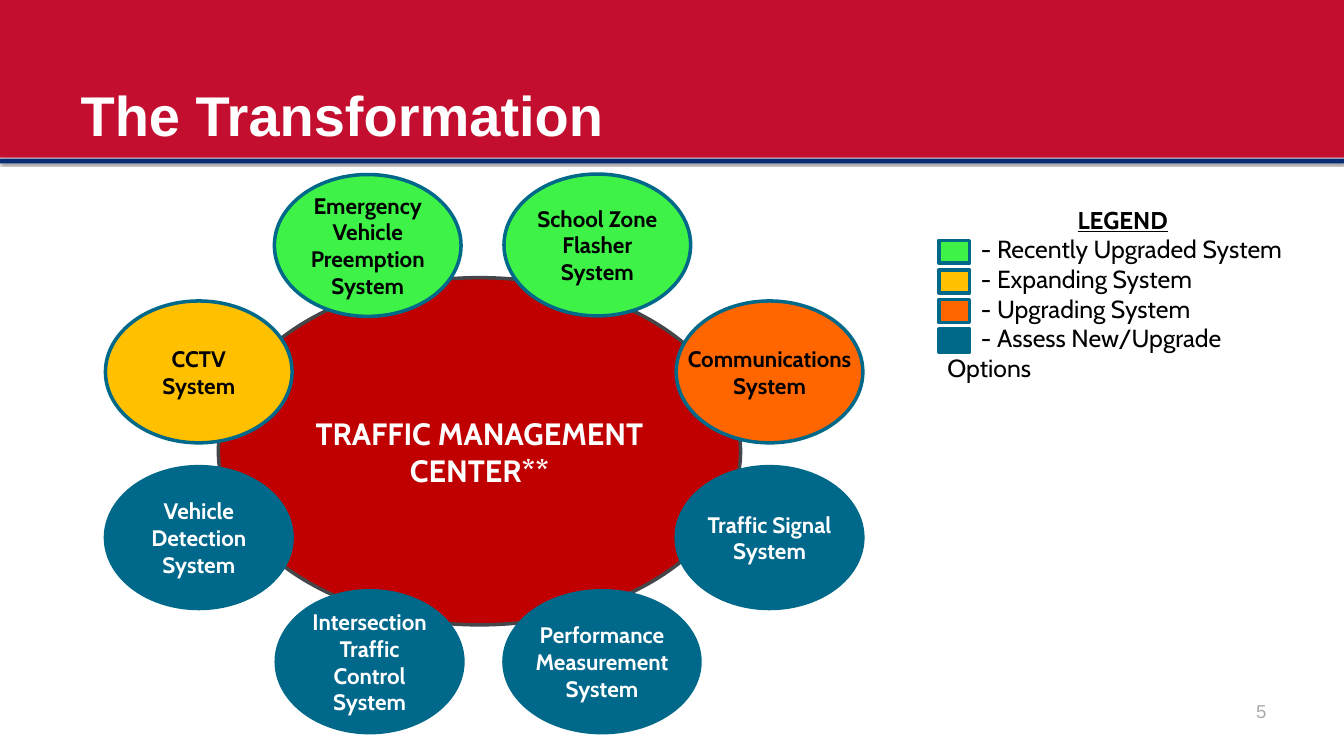
import pptx
import pptx.util
import pptx.dml.color
import pptx.enum.shapes
import pptx.enum.text
import lxml.etree

Pt = pptx.util.Pt
SHAPE = pptx.enum.shapes.MSO_SHAPE
ALIGN = pptx.enum.text.PP_ALIGN
ANCHOR = pptx.enum.text.MSO_ANCHOR

COLORS = {
    "banner": "C30E2F", "rule": "0A2C74", "center": "C00000", "center_line": "44464A",
    "outline": "006889", "upgraded": "3EF247", "expanding": "FFC000",
    "upgrading": "FF6600", "assess": "00698B", "white": "FFFFFF", "black": "000000",
    "number": "AAAAAA",
}
TITLE = "The Transformation"
CENTER = ["TRAFFIC MANAGEMENT", "CENTER**"]
PAGE_NUMBER = "5"
SYSTEMS = [
    (["Vehicle Detection System"], "assess", 113, 500, 200),
    (["CCTV System"], "expanding", 113, 322.5, 200),
    (["Emergency Vehicle Preemption System"], "upgraded", 294, 187, 200),
    (["Communications", "System"], "upgrading", 724.5, 322.5, 200),
    (["Intersection Traffic Control System"], "assess", 296, 633, 200),
    (["Performance Measurement System"], "assess", 540, 633, 210),
    (["Traffic Signal System"], "assess", 724.5, 500, 200),
    (["School Zone Flasher System"], "upgraded", 540, 186.5, 200),
]
SYSTEM_HEIGHT = 152
LEGEND_TITLE = "LEGEND"
LEGEND = [
    ("upgraded", "- Recently Upgraded System"),
    ("expanding", "- Expanding System"),
    ("upgrading", "- Upgrading System"),
    ("assess", "- Assess New/Upgrade Options"),
]
SWATCH_TOP, SWATCH_STEP = 257.5, 31.75


def color(name):
    return pptx.dml.color.RGBColor.from_string(COLORS[name])


def add_block(page, kind, area, fill, line=None):
    block = page.shapes.add_shape(kind, *[Pt(value) for value in area])
    block.shadow.inherit = False
    block.fill.solid()
    block.fill.fore_color.rgb = color(fill)
    if line:
        block.line.color.rgb = color(line)
        block.line.width = Pt(3.78)
    else:
        block.line.fill.background()
    return block


def write(box, lines, size, ink, font="Cabin", bold=True, align=ALIGN.CENTER,
          anchor=ANCHOR.MIDDLE, insets=(7.2, 3.6, 7.2, 3.6), wrap=True):
    frame = box.text_frame
    frame.text = "\n".join(lines)
    frame.word_wrap = wrap
    frame.vertical_anchor = anchor
    (frame.margin_left, frame.margin_top,
     frame.margin_right, frame.margin_bottom) = [Pt(value) for value in insets]
    for para in frame.paragraphs:
        para.alignment = align
        for span in para.runs:
            span.font.name = font
            span.font.size = Pt(size)
            span.font.bold = bold
            span.font.color.rgb = color(ink)
    return frame


def add_text(page, area, lines, size, ink, **options):
    box = page.shapes.add_textbox(*[Pt(value) for value in area])
    return write(box, lines, size, ink, **options)


def add_soft_shadow(block):
    effects = block.shadow._element.find(pptx.oxml.ns.qn("a:effectLst"))
    shadow = lxml.etree.SubElement(
        effects, pptx.oxml.ns.qn("a:outerShdw"), blurRad=str(Pt(2.5)),
        dist=str(Pt(0.8)), dir="5400000", rotWithShape="0")
    tint = lxml.etree.SubElement(shadow, pptx.oxml.ns.qn("a:srgbClr"), val=COLORS["black"])
    lxml.etree.SubElement(tint, pptx.oxml.ns.qn("a:alpha"), val="60000")


def add_legend(page):
    lines = [LEGEND_TITLE] + [label for _, label in LEGEND]
    frame = add_text(page, (1008, 216, 390, 232.5), lines, 26.5, "black",
                     bold=False, align=ALIGN.LEFT, anchor=ANCHOR.TOP)
    heading, *entries = frame.paragraphs
    heading.alignment = ALIGN.CENTER
    heading.runs[0].font.size = Pt(26)
    heading.runs[0].font.bold = True
    heading.runs[0].font.underline = True
    for para in entries:
        para._p.get_or_add_pPr().set("indent", str(Pt(36)))
    for row, (status, _) in enumerate(LEGEND):
        area = (1006, SWATCH_TOP + row * SWATCH_STEP, 33, 24.5)
        add_block(page, SHAPE.RECTANGLE, area, status, "outline")


def main():
    deck = pptx.Presentation()
    deck.slide_width, deck.slide_height = Pt(1440), Pt(810)
    page = deck.slides.add_slide(deck.slide_layouts[6])

    add_soft_shadow(add_block(page, SHAPE.RECTANGLE, (0, 170, 1440, 5), "rule"))
    add_block(page, SHAPE.RECTANGLE, (0, 0, 1440, 169), "banner")
    hub = add_block(page, SHAPE.OVAL, (234, 297.5, 559.5, 372), "center", "center_line")
    write(hub, CENTER, 33, "white")
    add_text(page, (72, 18, 1296, 147.5), [TITLE], 60, "white", font="Arial",
             align=ALIGN.LEFT, anchor=ANCHOR.BOTTOM, insets=(14.4, 7.2, 7.2, 7.2))

    for lines, status, left, top, width in SYSTEMS:
        oval = add_block(page, SHAPE.OVAL, (left, top, width, SYSTEM_HEIGHT), status, "outline")
        ink = "white" if status == "assess" else "black"
        write(oval, lines, 24, ink, insets=(0, 3.6, 0, 3.6), wrap=len(lines) == 1)

    add_legend(page)
    add_text(page, (1255.5, 741, 116, 32.5), [PAGE_NUMBER], 20, "number", font="Arial",
             bold=False, align=ALIGN.RIGHT, anchor=ANCHOR.BOTTOM, insets=(14.4, 7.2, 14.4, 0))
    deck.save("out.pptx")


if __name__ == "__main__":
    main()
